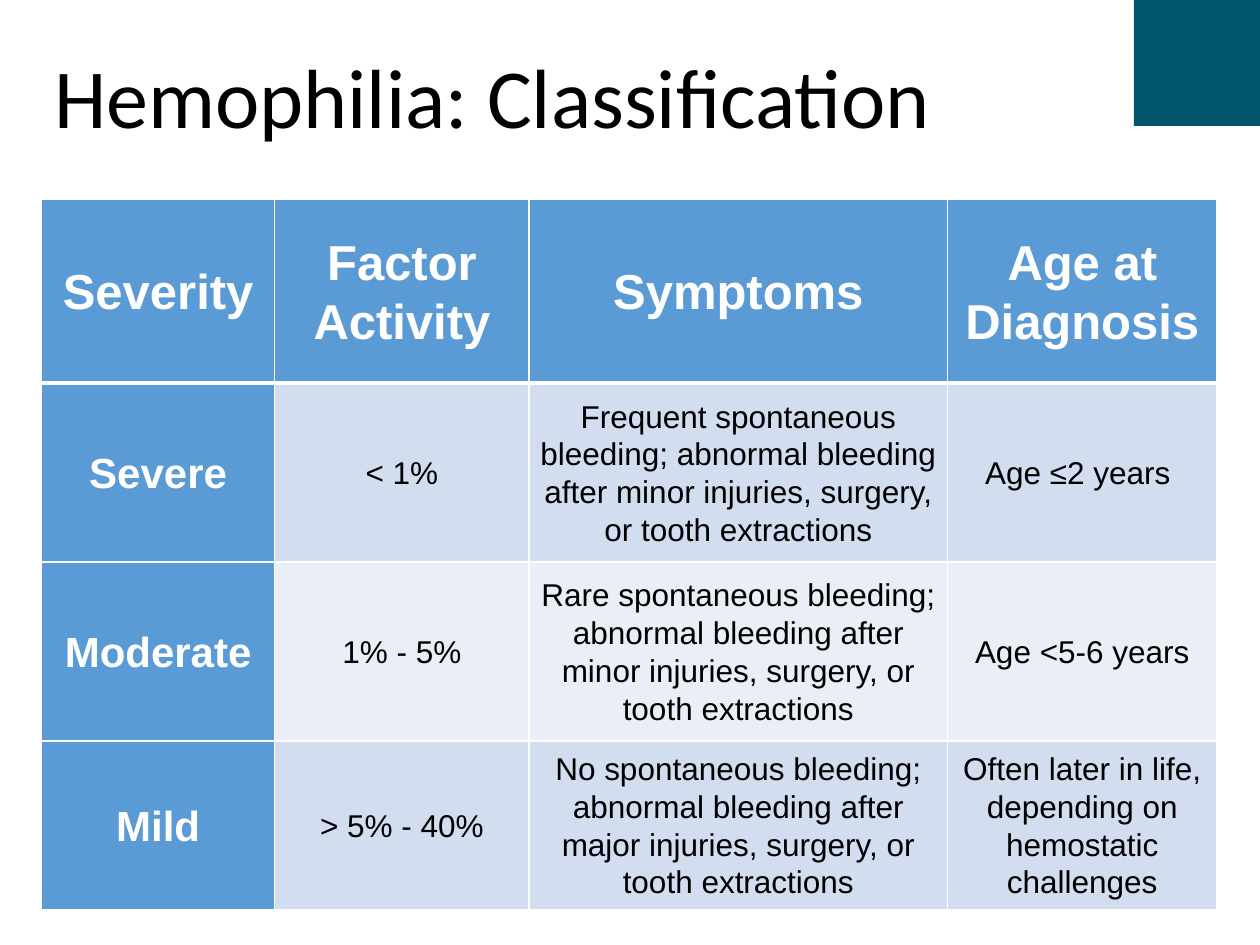
from lxml import etree
from pptx import Presentation
from pptx.dml.color import RGBColor
from pptx.enum.text import MSO_ANCHOR, MSO_AUTO_SIZE, PP_ALIGN
from pptx.oxml.ns import qn
from pptx.util import Inches, Pt

MIDDLE = MSO_ANCHOR.MIDDLE
CENTER, LEFT = PP_ALIGN.CENTER, PP_ALIGN.LEFT

THEME = {
    "banner": "00556A", "header": "5B9BD5", "bands": ("D2DEEF", "EAEFF7"),
    "light": "FFFFFF", "dark": "000000",
    "title_font": "Calibri", "table_font": "Arial",
    "title_size": 48, "header_size": 28, "severity_size": 24, "body_size": 18,
}
TITLE = "Hemophilia: Classification"
COLUMNS = [1.85, 2.02, 3.32, 2.14]
ROWS = [1.46, 1.42, 1.42, 1.34]
CLASSIFICATION = [
    ["Severity", "Factor Activity", "Symptoms", "Age at Diagnosis"],
    ["Severe", "< 1%",
     "Frequent spontaneous bleeding; abnormal bleeding after minor injuries, surgery, or tooth extractions",
     "Age ≤2 years "],
    ["Moderate", "1% - 5%",
     "Rare spontaneous bleeding; abnormal bleeding after minor injuries, surgery, or tooth extractions",
     "Age <5-6 years"],
    ["Mild", "> 5% - 40%",
     "No spontaneous bleeding; abnormal bleeding after major injuries, surgery, or tooth extractions",
     "Often later in life, depending on hemostatic challenges"],
]
BANNER_CURVES = [
    [(10, 0), (10, 0.14), (9.99, 1.15), (9.99, 1.29)],
    [(9.99, 1.29), (9.98, 0), (3.36, 0.1), (0.03, 0.1)],
]
CURVE_STEPS = 60


def style_paragraph(paragraph, font, size, color, bold, align, line_spacing):
    paragraph.alignment = align
    paragraph.line_spacing = line_spacing
    paragraph.font.name = font
    paragraph.font.size = Pt(size)
    paragraph.font.bold = bold
    paragraph.font.color.rgb = RGBColor.from_string(color)


def set_borders(cell, widths):
    properties = cell._tc.get_or_add_tcPr()
    for position, (side, width) in enumerate(widths.items()):
        line = etree.Element(qn(f"a:ln{side}"), w=str(Pt(width)))
        fill = etree.SubElement(line, qn("a:solidFill"))
        etree.SubElement(fill, qn("a:srgbClr"), val=THEME["light"])
        properties.insert(position, line)


prs = Presentation()
prs.slide_width, prs.slide_height = Inches(10), Inches(7.5)
slide = prs.slides.add_slide(prs.slide_layouts[5])

banner_points = []
for start, control_a, control_b, end in BANNER_CURVES:
    for step in range(1, CURVE_STEPS + 1):
        t = step / CURVE_STEPS
        weights = ((1 - t) ** 3, 3 * t * (1 - t) ** 2, 3 * t ** 2 * (1 - t), t ** 3)
        corners = (start, control_a, control_b, end)
        banner_points.append(tuple(
            sum(w * corner[axis] for w, corner in zip(weights, corners)) for axis in (0, 1)))
outline = slide.shapes.build_freeform(0, 0, scale=Inches(1))
outline.add_line_segments([(10, 0)] + banner_points, close=True)
banner = outline.convert_to_shape()
banner.shadow.inherit = False
banner.fill.solid()
banner.fill.fore_color.rgb = RGBColor.from_string(THEME["banner"])
banner.line.fill.background()

title = slide.shapes.title
title.left, title.top = Inches(0.33), Inches(0.19)
title.width, title.height = Inches(8.71), Inches(1.23)
title.text_frame.text = TITLE
title.text_frame.auto_size = MSO_AUTO_SIZE.NONE
title.text_frame.vertical_anchor = MIDDLE
style_paragraph(title.text_frame.paragraphs[0], THEME["title_font"], THEME["title_size"],
                THEME["dark"], False, LEFT, 0.9)
title._element.addprevious(banner._element)

table = slide.shapes.add_table(len(ROWS), len(COLUMNS), Inches(0.33), Inches(1.58),
                               Inches(sum(COLUMNS)), Inches(sum(ROWS))).table
table.first_col = True
for column, width in zip(table.columns, COLUMNS):
    column.width = Inches(width)
for row, height in zip(table.rows, ROWS):
    row.height = Inches(height)

for r, texts in enumerate(CLASSIFICATION):
    for c, text in enumerate(texts):
        heading = r == 0 or c == 0
        if r == 0:
            size = THEME["header_size"]
        else:
            size = THEME["severity_size"] if c == 0 else THEME["body_size"]
        cell = table.cell(r, c)
        cell.text = text
        cell.vertical_anchor = MIDDLE
        cell.margin_left = cell.margin_right = Inches(0.03)
        cell.margin_top = cell.margin_bottom = Inches(0.03)
        cell.fill.solid()
        cell.fill.fore_color.rgb = RGBColor.from_string(
            THEME["header"] if heading else THEME["bands"][(r - 1) % 2])
        set_borders(cell, {"L": 1, "R": 1, "T": 3 if r == 1 else 1, "B": 3 if r == 0 else 1})
        style_paragraph(cell.text_frame.paragraphs[0], THEME["table_font"], size,
                        THEME["light"] if heading else THEME["dark"], heading, CENTER, 1.07)

prs.save("out.pptx")
